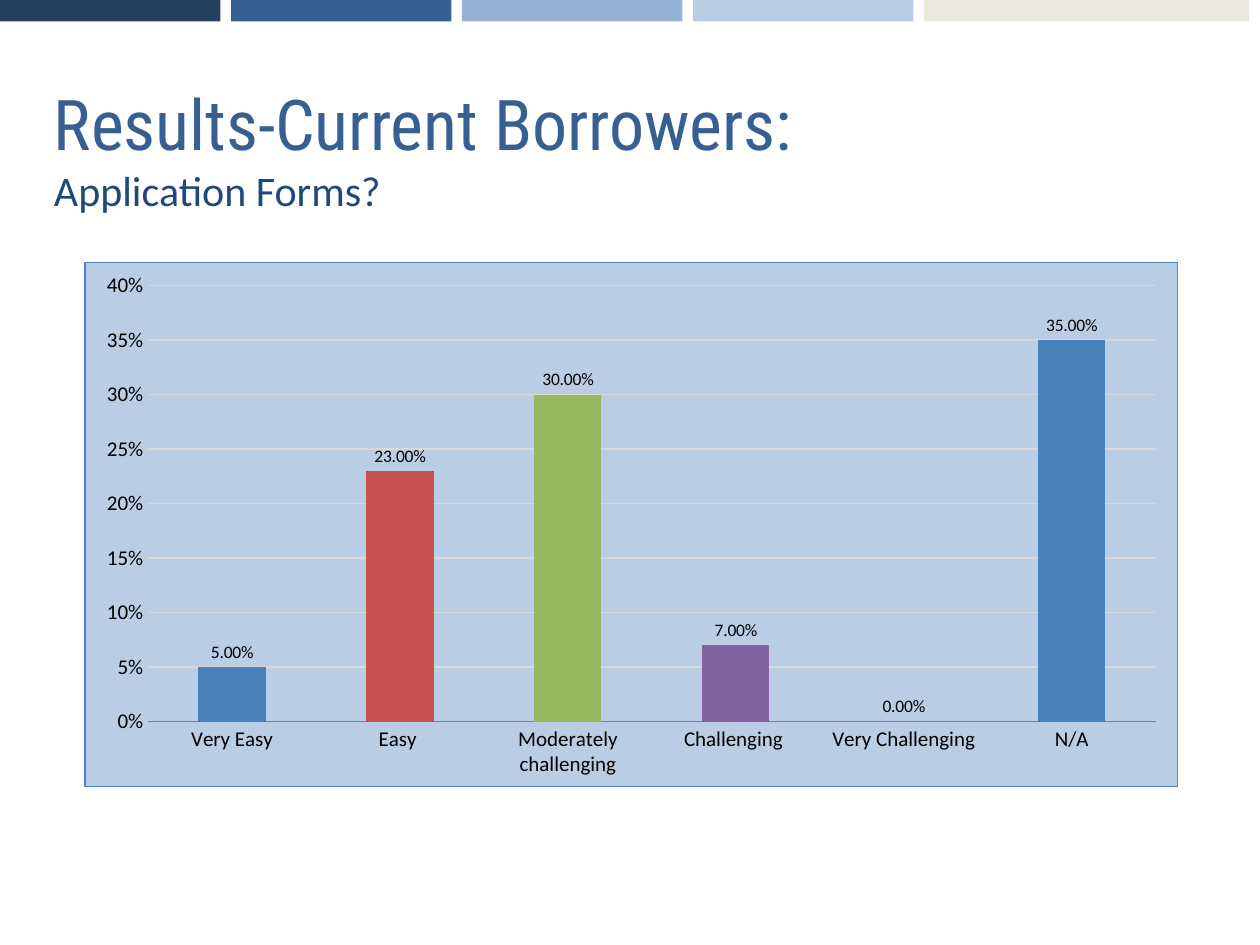
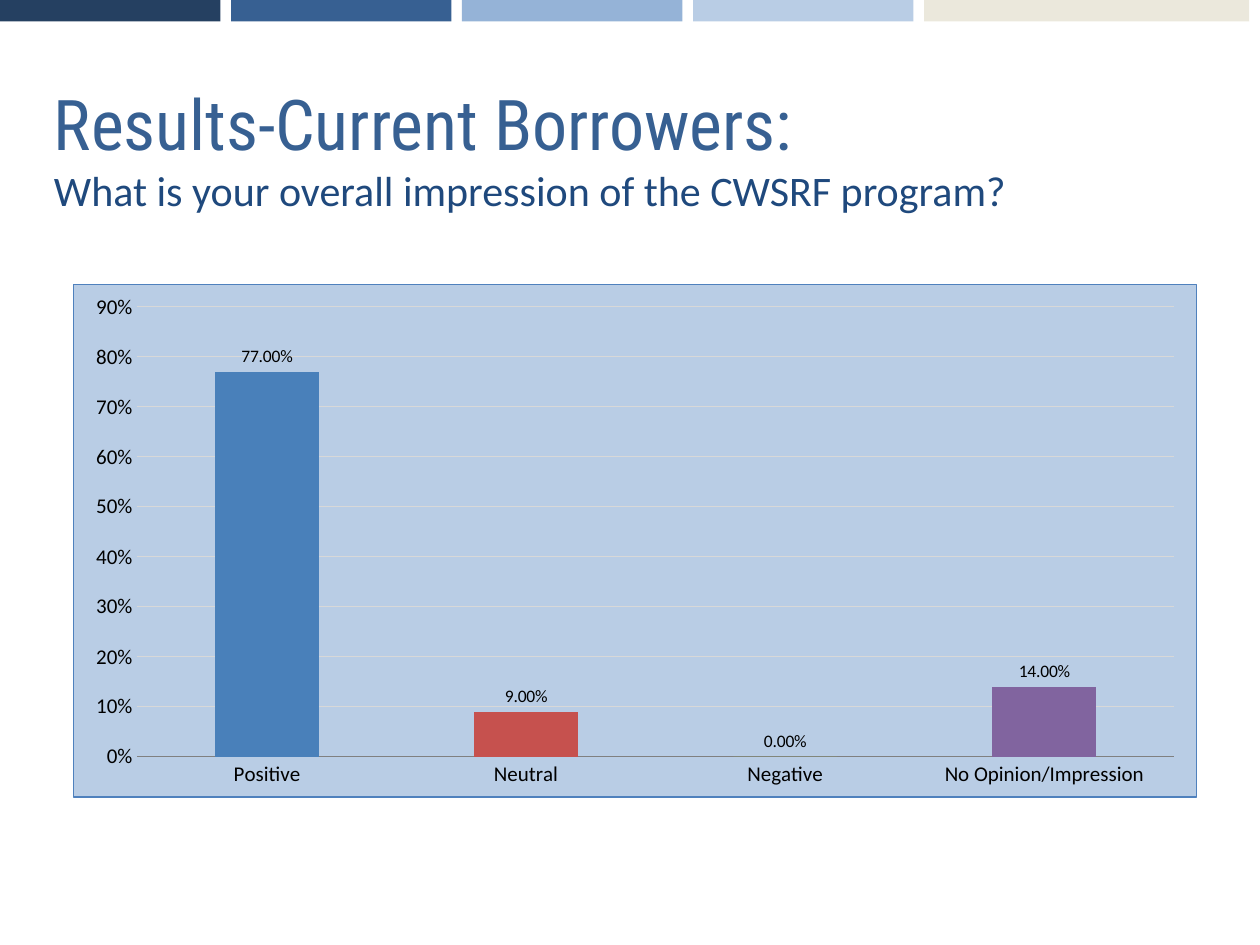
from lxml import etree
from pptx import Presentation
from pptx.chart.data import CategoryChartData
from pptx.dml.color import RGBColor
from pptx.enum.chart import XL_CHART_TYPE, XL_LABEL_POSITION, XL_TICK_MARK
from pptx.enum.shapes import MSO_SHAPE
from pptx.enum.text import MSO_ANCHOR
from pptx.oxml import parse_xml
from pptx.oxml.ns import nsdecls, qn
from pptx.util import Inches, Pt

RECT = MSO_SHAPE.RECTANGLE
COLUMN = XL_CHART_TYPE.COLUMN_CLUSTERED
ABOVE = XL_LABEL_POSITION.OUTSIDE_END
NO_TICK = XL_TICK_MARK.NONE
MIDDLE = MSO_ANCHOR.MIDDLE

# Shared look
HEAD_FONT, BODY_FONT = "Roboto Condensed", "Calibri"
BLUE, NAVY, BLACK = "376092", "1F497D", "000000"
PANEL, EDGE, GRID, AXIS = "B9CDE5", "4F81BD", "D8D8D8", "808080"
BANDS = ["254061", BLUE, "95B3D7", PANEL, "DDD9C3"]
BAND_STEP, BAND_WIDTH, LAST_WIDTH, BAND_HEIGHT = 5.5 / 3, 1.75, 2.58, 0.17
LAST_ALPHA = 58
BARS = ["4980BA", "C6514E", "96B95D", "81649F", "38ABC4", "4980BA"]
HEADING = "Results-Current Borrowers:"


def color(code):
    return RGBColor.from_string(code)


def style(font, size, code, name=BODY_FONT):
    font.size = Pt(size)
    font.name = name
    font.color.rgb = color(code)


def stroke(line, code):
    line.color.rgb = color(code)
    line.width = Pt(0.75)


def add_bands(slide):
    """Colour strip along the top; the last band is wider and see-through."""
    last = len(BANDS) - 1
    for i, code in enumerate(BANDS):
        width = LAST_WIDTH if i == last else BAND_WIDTH
        band = slide.shapes.add_shape(
            RECT, Inches(i * BAND_STEP), 0, Inches(width), Inches(BAND_HEIGHT))
        band.shadow.inherit = False
        band.fill.solid()
        band.fill.fore_color.rgb = color(code)
        band.line.fill.background()
    tint = band.fill._xPr.find(".//" + qn("a:srgbClr"))
    etree.SubElement(tint, qn("a:alpha"), val=str(LAST_ALPHA * 1000))


def add_title(slide, topic):
    box = slide.shapes.add_textbox(
        Inches(0.33), Inches(0.42), Inches(8.75), Inches(1.5))
    frame = box.text_frame
    frame.word_wrap = True
    frame.vertical_anchor = MIDDLE
    head, sub = frame.paragraphs[0], frame.add_paragraph()
    head.text, sub.text = HEADING, topic
    style(head.font, 40, BLUE, HEAD_FONT)
    style(sub.font, 24, NAVY)


def fill_panel(chart):
    """Background and border of the whole chart area."""
    panel = parse_xml(
        f'<c:spPr {nsdecls("c", "a")}>'
        f'<a:solidFill><a:srgbClr val="{PANEL}"/></a:solidFill>'
        f'<a:ln w="{Pt(0.75)}"><a:solidFill><a:srgbClr val="{EDGE}"/>'
        '</a:solidFill></a:ln></c:spPr>')
    chart.element.find(qn("c:txPr")).addprevious(panel)


def style_axes(chart, top, step):
    for axis in (chart.category_axis, chart.value_axis):
        axis.major_tick_mark = axis.minor_tick_mark = NO_TICK
        style(axis.tick_labels.font, 12, BLACK)
    stroke(chart.category_axis.format.line, AXIS)
    scale = chart.value_axis
    scale.minimum_scale, scale.maximum_scale = 0, top
    scale.major_unit = step
    scale.format.line.fill.background()
    scale.has_major_gridlines = True
    stroke(scale.major_gridlines.format.line, GRID)
    scale.tick_labels.number_format = "0%"
    scale.tick_labels.number_format_is_linked = False


def add_bars(slide, area, shares, top, step):
    data = CategoryChartData(number_format="0.00%")
    data.categories = list(shares)
    data.add_series("Series 1", list(shares.values()))
    chart = slide.shapes.add_chart(COLUMN, *map(Inches, area), data).chart
    chart.has_legend = chart.has_title = False
    style(chart.font, 18, BLACK)
    fill_panel(chart)
    style_axes(chart, top, step)

    # Bars and their labels
    plot = chart.plots[0]
    plot.gap_width = 150
    plot.vary_by_categories = False
    series = plot.series[0]
    for i, code in zip(range(len(shares)), BARS):
        fill = series.points[i].format.fill
        fill.solid()
        fill.fore_color.rgb = color(code)
    labels = series.data_labels
    labels.show_value = True
    labels.number_format = "0.00%"
    labels.number_format_is_linked = False
    labels.position = ABOVE
    style(labels.font, 10, BLACK)


def add_page(deck, topic, area, shares, top, step):
    slide = deck.slides.add_slide(deck.slide_layouts[6])
    add_bands(slide)
    add_title(slide, topic)
    add_bars(slide, area, shares, top, step)


def main():
    deck = Presentation()
    deck.slide_width, deck.slide_height = Inches(10), Inches(7.5)

    # Slide 1: forms
    forms = {"Very Easy": 0.05, "Easy ": 0.23, "Moderately challenging": 0.3,
             "Challenging ": 0.07, "Very Challenging": 0, "N/A": 0.35}
    add_page(deck, "Application Forms?", (0.67, 2.08, 8.68, 4.17),
             forms, 0.4, 0.05)

    # Slide 2: overall view
    views = {"Positive": 0.77, "Neutral": 0.09, "Negative": 0,
             "No Opinion/Impression": 0.14}
    add_page(deck, "What is your overall impression of the CWSRF program?",
             (0.58, 2.25, 8.92, 4.08), views, 0.9, 0.1)

    deck.save("out.pptx")


if __name__ == "__main__":
    main()
